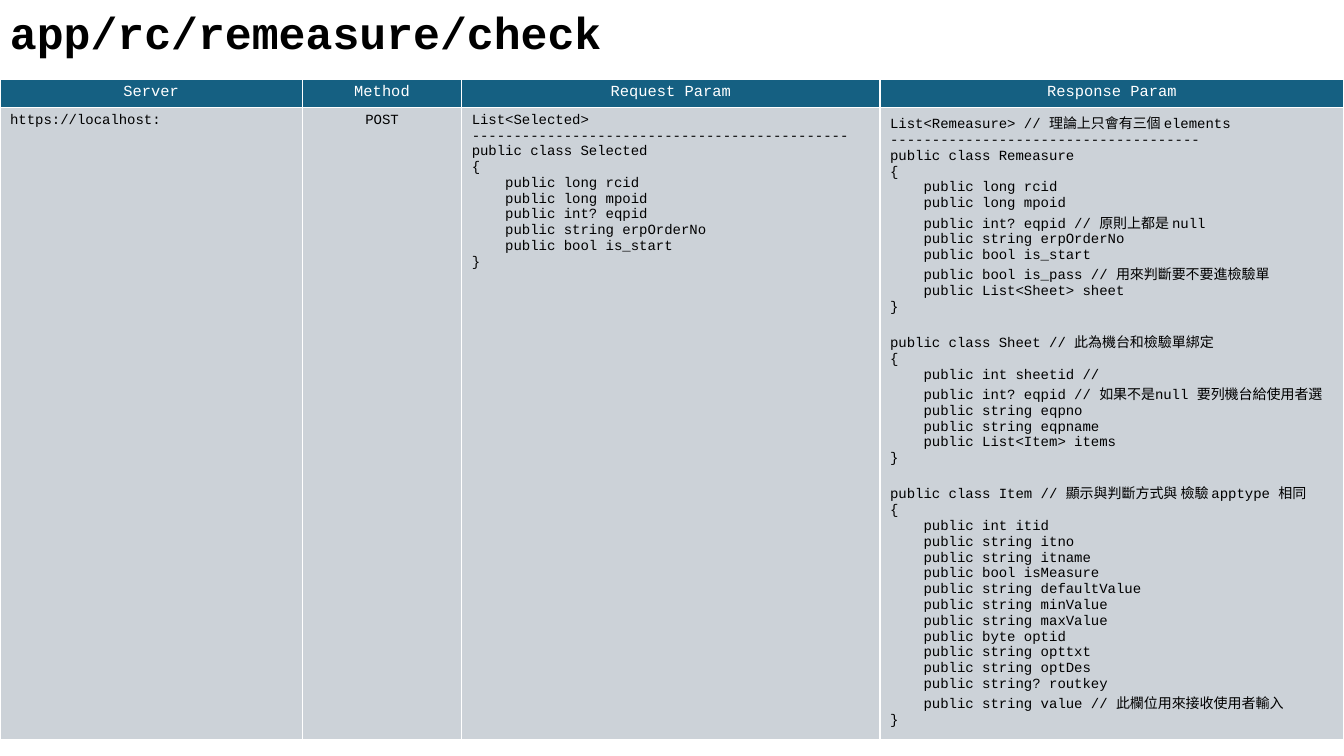
from lxml import etree
from pptx import Presentation
from pptx.dml.color import RGBColor
from pptx.enum import text
from pptx.oxml import ns
from pptx.util import Pt

FACE = "Courier New"
WIDTHS = [216, 113.8, 298.8, 331.4]
HEADS = ["Server", "Method", "Request Param", "Response Param"]
REQUEST = """List<Selected>
---------------------------------------------
public class Selected
{
    public long rcid
    public long mpoid
    public int? eqpid
    public string erpOrderNo
    public bool is_start
}"""
MEASURE = """List<Remeasure> // 理論上只會有三個 elements
-------------------------------------
public class Remeasure
{
    public long rcid
    public long mpoid
    public int? eqpid // 原則上都是 null
    public string erpOrderNo
    public bool is_start
    public bool is_pass // 用來判斷要不要進檢驗單
    public List<Sheet> sheet
}"""
SHEET = """public class Sheet // 此為機台和檢驗單綁定
{
    public int sheetid //
    public int? eqpid // 如果不是null 要列機台給使用者選
    public string eqpno
    public string eqpname
    public List<Item> items
}"""
ITEM = """public class Item // 顯示與判斷方式與 檢驗 apptype 相同
{
    public int itid
    public string itno
    public string itname
    public bool isMeasure
    public string defaultValue
    public string minValue
    public string maxValue
    public byte optid
    public string opttxt
    public string optDes
    public string? routkey
    public string value // 此欄位用來接收使用者輸入
}"""


def color(code):
    """Turn a hex string into a colour."""
    return RGBColor.from_string(code)


def write(frame, words, size, ink, bold=False, center=False):
    """Fill a text frame, with a gap after each closing brace."""
    frame.text = words
    last = ""
    for para in frame.paragraphs:
        para.alignment = text.PP_ALIGN.CENTER if center else text.PP_ALIGN.LEFT
        if last == "}":
            para.space_before = Pt(11.3)
        last = para.text
        for run in para.runs:
            run.font.name = FACE
            run.font.size = Pt(size)
            run.font.bold = bold
            run.font.color.rgb = color(ink)


def border(cell, code, width):
    """Draw the four borders of a cell."""
    props = cell._tc.get_or_add_tcPr()
    for side in ("a:lnL", "a:lnR", "a:lnT", "a:lnB"):
        line = etree.SubElement(props, ns.qn(side), w=str(Pt(width)))
        fill = etree.SubElement(line, ns.qn("a:solidFill"))
        etree.SubElement(fill, ns.qn("a:srgbClr"), val=code)


def title(slide, words):
    """Add the heading."""
    box = slide.shapes.add_textbox(Pt(0), Pt(0), Pt(680.4), Pt(46))
    box.text_frame.word_wrap = True
    box.text_frame.auto_size = text.MSO_AUTO_SIZE.SHAPE_TO_FIT_TEXT
    write(box.text_frame, words, 32, "000000", bold=True)


def fill_row(table, row, words, size, ink, back, mid):
    """Write and colour one table row, centring the columns in mid."""
    for col, item in enumerate(words):
        cell = table.cell(row, col)
        border(cell, "FFFFFF", 1)
        cell.fill.solid()
        cell.fill.fore_color.rgb = color(back)
        write(cell.text_frame, item, size, ink, center=col in mid)


def grid(slide):
    """Add the table of the endpoint."""
    shape = slide.shapes.add_table(2, 4, Pt(0), Pt(56.4), Pt(960), Pt(471.6))
    table = shape.table
    for col, width in zip(table.columns, WIDTHS):
        col.width = Pt(width)
    table.rows[0].height = Pt(20)
    table.rows[1].height = Pt(451.6)
    reply = "\n".join([MEASURE, SHEET, ITEM])
    body = ["https://localhost:", "POST", REQUEST, reply]
    fill_row(table, 0, HEADS, 11, "FFFFFF", "156082", range(4))
    fill_row(table, 1, body, 10, "000000", "CCD2D8", [1])


def main():
    """Build and save the slide."""
    deck = Presentation()
    deck.slide_width, deck.slide_height = Pt(960), Pt(540)
    slide = deck.slides.add_slide(deck.slide_layouts[6])
    title(slide, "app/rc/remeasure/check")
    grid(slide)
    deck.save("out.pptx")


if __name__ == "__main__":
    main()
